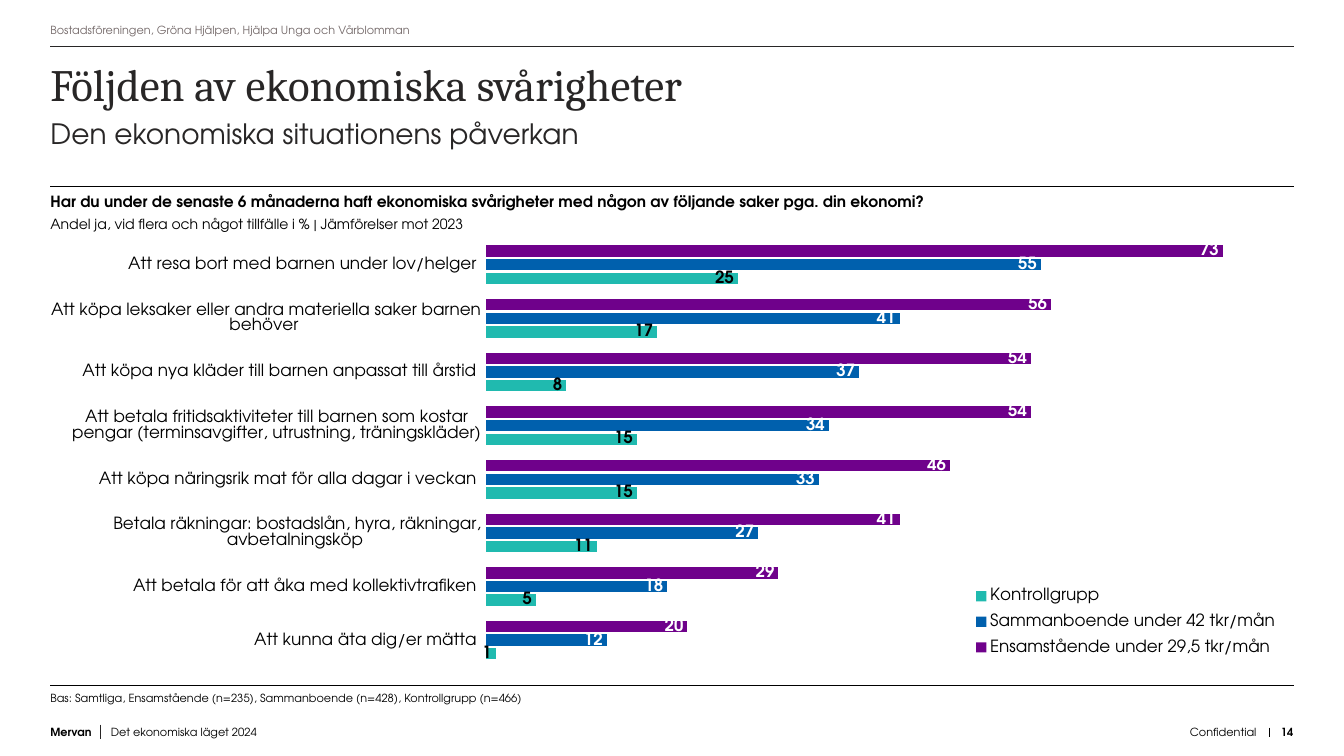
from dataclasses import dataclass

from lxml import etree
from pptx import Presentation
from pptx import util as u
from pptx.chart import data as chart_data
from pptx.dml import color
from pptx.enum import chart as charts, shapes, text
from pptx.oxml import ns

ORGANISATIONS = "Bostadsföreningen, Gröna Hjälpen, Hjälpa Unga och Vårblomman"
QUESTION = ("Har du under de senaste 6 månaderna haft ekonomiska svårigheter "
            "med någon av följande saker pga. din ekonomi?")
MEASURE = "Andel ja, vid flera och något tillfälle i % | Jämförelser mot 2023"
BASE = "Bas: Samtliga, Ensamstående (n=235), Sammanboende (n=428), Kontrollgrupp (n=466)"
DIFFICULTIES = [
    "Att resa bort med barnen under lov/helger ",
    "Att köpa leksaker eller andra materiella saker barnen behöver ",
    "Att köpa nya kläder till barnen anpassat till årstid ",
    "Att betala fritidsaktiviteter till barnen som kostar pengar (terminsavgifter, utrustning, träningskläder)",
    "Att köpa näringsrik mat för alla dagar i veckan ",
    "Betala räkningar: bostadslån, hyra, räkningar, avbetalningsköp ",
    "Att betala för att åka med kollektivtrafiken ",
    "Att kunna äta dig/er mätta ",
]


@dataclass(frozen=True)
class Theme:
    heading_font: str = "Cambria"
    body_font: str = "TeX Gyre Adventor"
    black: str = "000000"
    white: str = "FFFFFF"
    ink: str = "282626"
    muted: str = "736868"
    purple: str = "6F018B"
    blue: str = "0060AD"
    teal: str = "20BAAF"
    title: int = 32
    subtitle: int = 20
    chart: int = 12
    question: int = 11
    measure: int = 10
    small: int = 8
    rule: float = 0.5


THEME = Theme()
GROUPS = [
    ("Ensamstående under 29,5 tkr/mån", [73, 56, 54, 54, 46, 41, 29, 20], THEME.purple, THEME.white),
    ("Sammanboende under 42 tkr/mån", [55, 41, 37, 34, 33, 27, 18, 12], THEME.blue, THEME.white),
    ("Kontrollgrupp", [25, 17, 8, 15, 15, 11, 5, 1], THEME.teal, THEME.black),
]


class Page:
    COLUMNS, ROWS = 80, 75

    def __init__(self, deck, theme):
        self.theme = theme
        self.column = deck.slide_width / self.COLUMNS
        self.row = deck.slide_height / self.ROWS
        self.slide = deck.slides.add_slide(deck.slide_layouts.get_by_name("Comparison"))

    def area(self, left, top, width, height):
        return (round(left * self.column), round(top * self.row),
                round(width * self.column), round(height * self.row))

    def style(self, font, size, ink, bold=False, name=None):
        font.name = name or self.theme.body_font
        font.size = u.Pt(size)
        font.bold = bold
        font.color.rgb = color.RGBColor.from_string(ink)

    def fill_text(self, box, words, size, ink, bold=False, name=None,
                  anchor=text.MSO_ANCHOR.TOP, align=text.PP_ALIGN.LEFT, insets=(0, 0)):
        frame = box.text_frame
        frame.text = words
        frame.word_wrap = True
        frame.auto_size = text.MSO_AUTO_SIZE.NONE
        frame.vertical_anchor = anchor
        frame.margin_left = frame.margin_right = 0
        frame.margin_top, frame.margin_bottom = (u.Inches(inset) for inset in insets)
        para = frame.paragraphs[0]
        para.alignment = align
        para.space_before = u.Pt(0)
        for span in para.runs:
            self.style(span.font, size, ink, bold, name)

    def placeholder(self, index, area, words, size, ink, **options):
        box = self.slide.placeholders[index]
        box.left, box.top, box.width, box.height = self.area(*area)
        self.fill_text(box, words, size, ink, **options)

    def label(self, area, words, size, **options):
        box = self.slide.shapes.add_textbox(*self.area(*area))
        self.fill_text(box, words, size, self.theme.black, **options)

    def line(self, left, top, right, bottom, ink):
        ends = self.area(left, top, right, bottom)
        rule = self.slide.shapes.add_connector(shapes.MSO_CONNECTOR.STRAIGHT, *ends)
        rule.line.color.rgb = color.RGBColor.from_string(ink)
        rule.line.width = u.Pt(self.theme.rule)
        etree.SubElement(rule._element.spPr, ns.qn("a:effectLst"))

    def drop_empty_placeholders(self):
        for box in list(self.slide.placeholders):
            if not box.has_text_frame or not box.text_frame.text:
                box._element.getparent().remove(box._element)

    def manual_layout(self, parent, position, **settings):
        for old in parent.findall(ns.qn("c:layout")):
            parent.remove(old)
        layout = etree.Element(ns.qn("c:layout"))
        manual = etree.SubElement(layout, ns.qn("c:manualLayout"))
        for tag, value in settings.items():
            etree.SubElement(manual, ns.qn(f"c:{tag}")).set("val", str(value))
        parent.insert(position, layout)

    def bar_chart(self, area, categories, groups, maximum):
        theme = self.theme
        data = chart_data.CategoryChartData()
        data.categories = categories
        for name, values, _, _ in groups:
            data.add_series(name, values)
        chart = self.slide.shapes.add_chart(
            charts.XL_CHART_TYPE.BAR_CLUSTERED, *self.area(*area), data).chart
        self.style(chart.font, theme.measure, theme.black)
        chart.has_title = False

        plot = chart.plots[0]
        plot.gap_width, plot.overlap, plot.vary_by_categories = 132, -20, False
        for series, (_, _, fill, ink) in zip(plot.series, groups):
            series.format.fill.solid()
            series.format.fill.fore_color.rgb = color.RGBColor.from_string(fill)
            labels = series.data_labels
            labels.show_value = True
            labels.position = charts.XL_LABEL_POSITION.INSIDE_END
            self.style(labels.font, theme.chart, ink, bold=True)

        names = chart.category_axis
        names.reverse_order = True
        names.major_tick_mark = names.minor_tick_mark = charts.XL_TICK_MARK.NONE
        names.format.line.fill.background()
        self.style(names.tick_labels.font, theme.chart, theme.black)
        scale = chart.value_axis
        scale.minimum_scale, scale.maximum_scale = 0, maximum
        scale.has_major_gridlines = False
        scale.visible = False

        chart.has_legend = True
        legend = chart.legend
        legend.position = charts.XL_LEGEND_POSITION.TOP
        legend.include_in_layout = False
        self.style(legend.font, theme.chart, theme.black)
        self.manual_layout(legend._element, 1, xMode="edge", yMode="edge",
                           x=0.74, y=0.79, w=0.25, h=0.2)
        self.manual_layout(chart._chartSpace.chart.plotArea, 0, layoutTarget="inner",
                           xMode="edge", yMode="edge", x=0.35, y=0, w=0.65, h=0.995)


def main():
    deck = Presentation()
    deck.slide_width, deck.slide_height = u.Inches(13.33), u.Inches(7.5)
    theme = THEME
    page = Page(deck, theme)
    left, right = 3, 77
    width = right - left
    bottom, middle = text.MSO_ANCHOR.BOTTOM, text.MSO_ANCHOR.MIDDLE
    to_right = text.PP_ALIGN.RIGHT

    page.placeholder(0, (left, 4.6, width, 7.1), "Följden av ekonomiska svårigheter",
                     theme.title, theme.ink, name=theme.heading_font, insets=(0.1, 0))
    page.placeholder(1, (left, 1.9, width, 2.1), ORGANISATIONS,
                     theme.small, theme.muted, anchor=middle, insets=(0.04, 0.04))
    page.placeholder(3, (left, 11.6, width, 4.6), "Den ekonomiska situationens påverkan",
                     theme.subtitle, theme.ink)
    page.drop_empty_placeholders()

    page.label((left, 19.1, 64.5, 1.7), QUESTION, theme.question, bold=True)
    page.label((left, 21.4, 31, 1.5), MEASURE, theme.measure)
    page.bar_chart((left, 23.6, width, 42.8), DIFFICULTIES, GROUPS, maximum=80)
    page.label((left, 68.6, 49, 1.5), BASE, theme.small)

    for row, ink in ((4.6, theme.ink), (18.5, theme.black), (68, theme.black)):
        page.line(left, row, right, row, ink)
    page.line(6, 71.9, 6, 73.3, theme.ink)
    page.line(75.55, 72.2, 75.55, 73.1, theme.black)

    for start, span, words, bold, align in (
            (left, 3, "Mervan", True, text.PP_ALIGN.LEFT),
            (6.6, 46.8, "Det ekonomiska läget 2024", False, text.PP_ALIGN.LEFT),
            (61.6, 13.2, "Confidential", False, to_right),
            (75.55, 1.45, "14", True, to_right)):
        page.label((start, 71.6, span, 1.7), words, theme.small,
                   bold=bold, anchor=bottom, align=align)

    deck.save("out.pptx")


if __name__ == "__main__":
    main()
